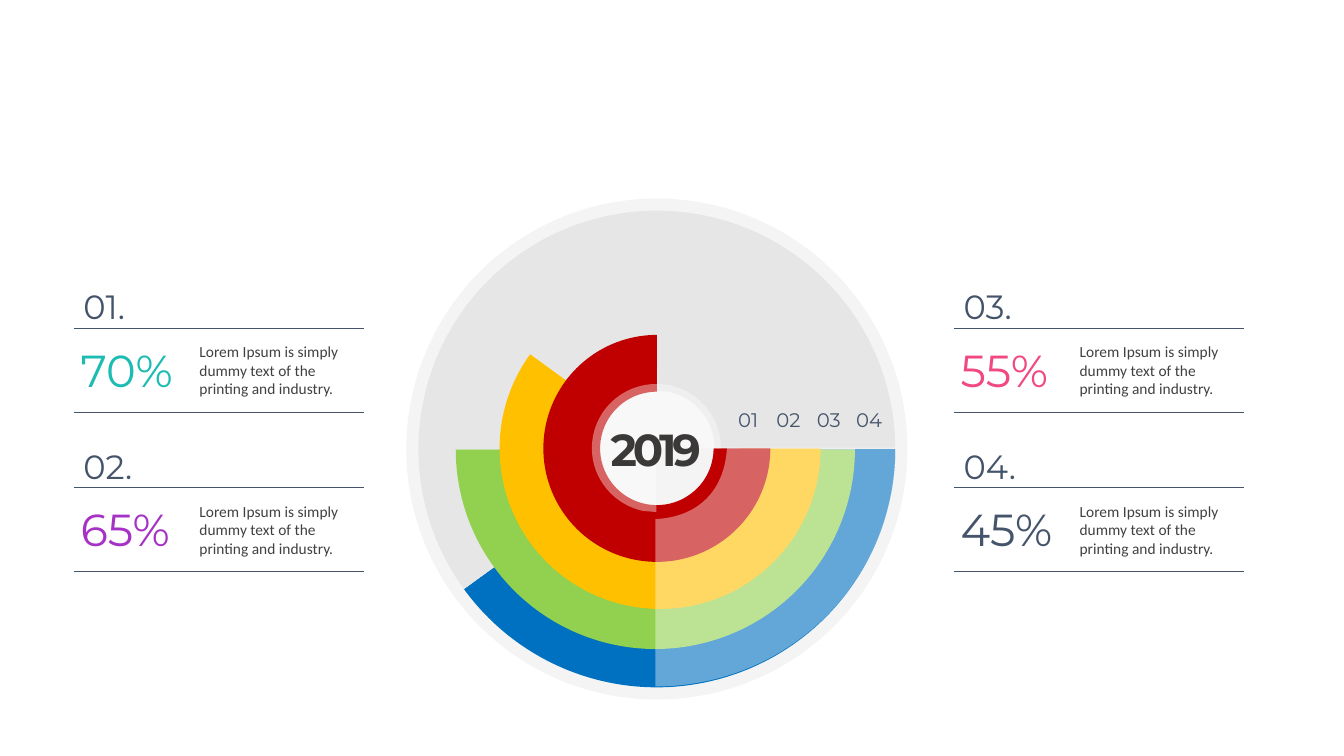
from dataclasses import dataclass

from pptx import Presentation
from pptx.chart.data import CategoryChartData as ChartData
from pptx.dml.color import RGBColor as Color
from pptx.enum.chart import XL_CHART_TYPE as Kind
from pptx.enum.shapes import MSO_CONNECTOR as Link, MSO_SHAPE as Form
from pptx.enum.text import MSO_AUTO_SIZE as Fit, PP_ALIGN as Align
from pptx.oxml import parse_xml as parse
from pptx.oxml.ns import nsdecls as names
from pptx.util import Inches, Pt

Spot = tuple[float, float]


@dataclass(frozen=True)
class Theme:
    head: str = "Montserrat"
    text: str = "Calibri"
    navy: str = "44546A"
    dark: str = "3B3838"
    body: str = "404040"
    gray: str = "E7E6E6"
    edge: str = "D9D9D9"
    white: str = "FFFFFF"
    black: str = "000000"
    big: float = 32
    mid: float = 24
    mark: float = 14
    small: float = 11
    tiny: float = 10


@dataclass(frozen=True)
class Ring:
    box: tuple[float, float, float, float]
    plot: tuple[float, float, float, float]
    hole: int
    share: int
    color: str
    line: float = 0
    burst: int = 0


@dataclass(frozen=True)
class Card:
    left: float
    top: float
    label: str
    value: str
    color: str


@dataclass(frozen=True)
class Veil:
    start: Spot
    steps: list[list[Spot]]


THEME = Theme()
RINGS = [
    Ring((4.15, 2.09, 4.73, 4.73), (0, 0, 1, 1), 77, 40, "0070C0", line=0.75),
    Ring((4.52, 2.46, 4, 4), (0, 0, 0.99, 1), 76, 50, "92D050"),
    Ring((4.89, 2.85, 3.25, 3.2), (0.02, 0, 0.98, 1), 71, 60, "FFC000", line=0.5),
    Ring((5.36, 3.29, 2.32, 2.31), (0.01, 0.01, 0.98, 0.98), 60, 75, "C00000", burst=1),
]
VEILS = [
    Veil((6.51, 3.81), [
        [(6.16, 3.81), (5.87, 4.09), (5.87, 4.45)],
        [(5.87, 4.75), (6.09, 5.01), (6.38, 5.07)],
        [(6.51, 5.08)], [(6.51, 4.46)], [(6.51, 4.45)], [(7.15, 4.45)],
        [(7.15, 4.09), (6.86, 3.81), (6.51, 3.81)],
    ]),
    Veil((8.88, 4.44), [
        [(7.21, 4.44)],
        [(7.19, 4.86), (6.93, 5.13), (6.5, 5.15)],
        [(6.5, 5.68), (6.5, 6.27), (6.5, 6.81)],
        [(7.82, 6.81), (8.88, 5.76), (8.88, 4.46)],
        [(8.88, 4.44)],
    ]),
]
LEFT, RIGHT = 0.73, 9.46
UPPER, LOWER = 2.79, 4.37
CARDS = [
    Card(LEFT, UPPER, "01.", "70%", "1CBBB3"),
    Card(LEFT, LOWER, "02.", "65%", "A632C5"),
    Card(RIGHT, UPPER, "03.", "55%", "F1487F"),
    Card(RIGHT, LOWER, "04.", "45%", THEME.navy),
]
BLURB = "Lorem Ipsum is simply dummy text of the printing and industry."


def rgb(code: str) -> Color:
    return Color.from_string(code)


def write(slide, text: str, x: float, y: float, w: float, h: float, *,
          size: float, color: str = THEME.navy, font: str = THEME.head,
          bold: bool = False, align=Align.LEFT, wrap: bool = False,
          space: int = 0) -> None:
    frame = slide.shapes.add_textbox(*map(Inches, (x, y, w, h))).text_frame
    frame.word_wrap = wrap
    frame.auto_size = Fit.SHAPE_TO_FIT_TEXT
    para = frame.paragraphs[0]
    para.alignment = align
    run = para.add_run()
    run.text = text
    run.font.name = font
    run.font.size = Pt(size)
    run.font.bold = bold
    run.font.color.rgb = rgb(color)
    if space:
        run.font._element.set("spc", str(space))


def tint(shape, color: str, alpha: int) -> None:
    shape.shadow.inherit = False
    shape.line.fill.background()
    shape.fill.solid()
    shape.fill.fore_color.rgb = rgb(color)
    for node in shape._element.spPr.xpath("./a:solidFill/a:srgbClr"):
        node.append(parse(f'<a:alpha {names("a")} val="{alpha * 1000}"/>'))


def draw_ring(slide, ring: Ring) -> None:
    data = ChartData()
    data.categories = ["1", "2"]
    data.add_series("Series 1", (ring.share, 100 - ring.share))
    chart = slide.shapes.add_chart(
        Kind.DOUGHNUT, *map(Inches, ring.box), data).chart
    chart.has_legend = False
    chart.has_title = False
    chart.font.name = THEME.text
    chart.font.size = Pt(THEME.tiny)
    chart.font.color.rgb = rgb(THEME.black)
    series = chart.plots[0].series[0]
    if ring.line:
        series.format.line.color.rgb = rgb(THEME.edge)
        series.format.line.width = Pt(ring.line)
    for i, color in enumerate((ring.color, THEME.gray)):
        look = series.points[i].format
        look.fill.solid()
        look.fill.fore_color.rgb = rgb(color)
        look.line.fill.background()

    root = chart.element
    root.xpath(".//c:firstSliceAng")[0].set("val", "90")
    root.xpath(".//c:holeSize")[0].set("val", str(ring.hole))
    if ring.burst:
        root.xpath(".//c:dPt")[0].addprevious(
            parse(f'<c:explosion {names("c")} val="{ring.burst}"/>'))
    area = root.xpath(".//c:plotArea")[0]
    for old in area.xpath("./c:layout"):
        area.remove(old)
    spots = "".join(f'<c:{key} val="{val}"/>' for key, val in zip("xywh", ring.plot))
    area.insert(0, parse(
        f'<c:layout {names("c")}><c:manualLayout><c:layoutTarget val="inner"/>'
        f'<c:xMode val="edge"/><c:yMode val="edge"/>{spots}'
        '</c:manualLayout></c:layout>'))
    clear = f'<c:spPr {names("c", "a")}><a:noFill/><a:ln><a:noFill/></a:ln></c:spPr>'
    area.append(parse(clear))
    root.xpath("./c:chart")[0].addnext(parse(clear))


def draw_veil(slide, veil: Veil) -> None:
    pen = slide.shapes.build_freeform(*map(Inches, veil.start))
    spots = [tuple(map(Inches, spot)) for step in veil.steps for spot in step]
    pen.add_line_segments(spots, close=True)
    shape = pen.convert_to_shape()
    lines = iter(shape._element.xpath(".//a:lnTo"))
    for step in veil.steps:
        parts = [next(lines) for _ in step]
        if len(parts) == 3:
            curve = parse(f'<a:cubicBezTo {names("a")}/>')
            parts[0].addprevious(curve)
            for part in parts:
                curve.append(part[0])
                part.getparent().remove(part)
    tint(shape, THEME.white, 39)


def draw_rule(slide, x: float, y: float) -> None:
    rule = slide.shapes.add_connector(
        Link.STRAIGHT, *map(Inches, (x, y, x + 2.88, y)))
    rule.line.color.rgb = rgb(THEME.navy)
    rule.line.width = Pt(0.5)
    rule._element.spPr.append(parse(f'<a:effectLst {names("a")}/>'))


def draw_card(slide, card: Card) -> None:
    x, y = card.left, card.top
    write(slide, BLURB, x + 1.15, y + 0.56, 1.73, 0.66, size=THEME.small,
          color=THEME.body, font=THEME.text, wrap=True)
    write(slide, card.value, x - 0.03, y + 0.56, 1.25, 0.64, size=THEME.big,
          color=card.color)
    write(slide, card.label, x, y, 0.76, 0.5, size=THEME.mid)
    for drop in (0.47, 1.3):
        draw_rule(slide, x, y + drop)


def main() -> None:
    deck = Presentation()
    deck.slide_width, deck.slide_height = Inches(13.33), Inches(7.5)
    slide = deck.slides.add_slide(deck.slide_layouts[6])
    disc = slide.shapes.add_shape(Form.OVAL, *map(Inches, (4.03, 1.97, 4.97, 4.97)))
    tint(disc, THEME.gray, 44)
    for ring in RINGS:
        draw_ring(slide, ring)
    for veil in VEILS:
        draw_veil(slide, veil)
    for i in range(4):
        write(slide, f"0{i + 1}", 7.19 + 0.4 * i, 4, 0.46, 0.34,
              size=THEME.mark, align=Align.CENTER)
    write(slide, "2019", 5.89, 4.13, 1.23, 0.64, size=THEME.big,
          color=THEME.dark, bold=True, align=Align.CENTER, space=-300)
    for card in CARDS:
        draw_card(slide, card)
    deck.save("out.pptx")


if __name__ == "__main__":
    main()
